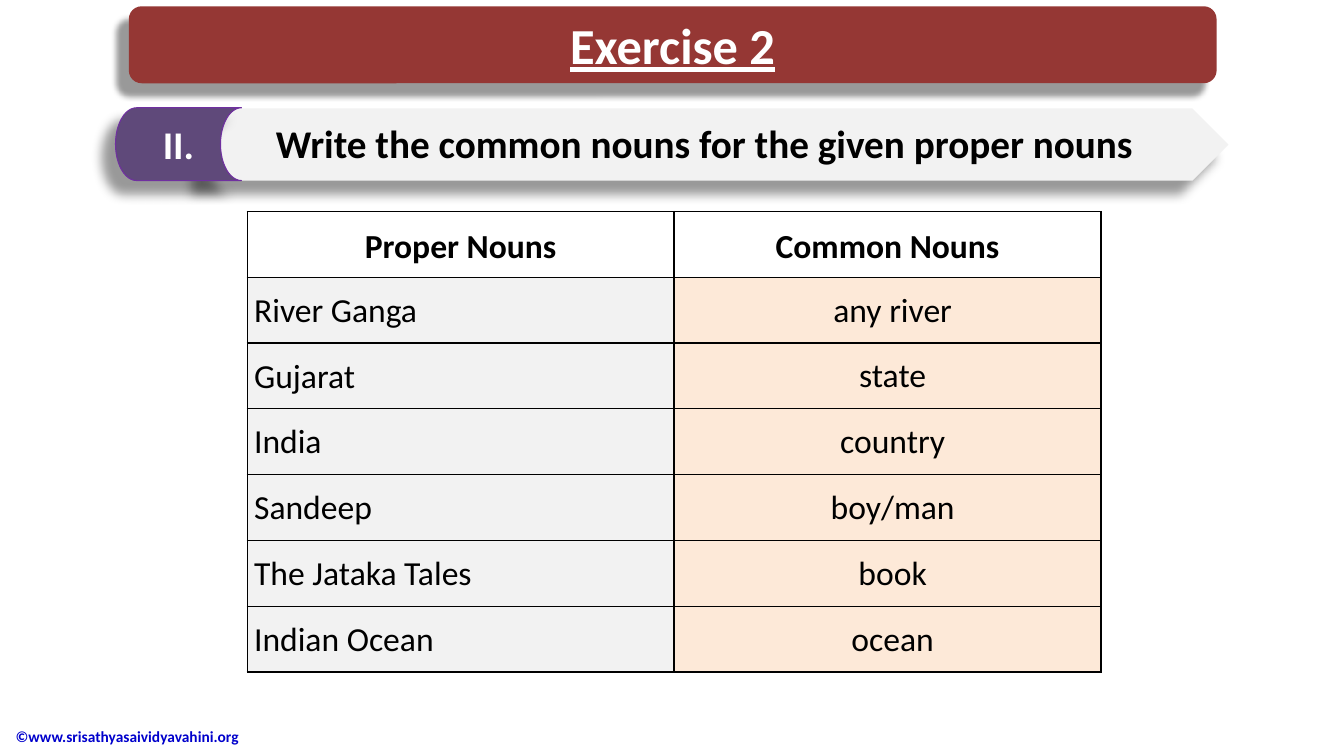
from lxml import etree
from pptx import Presentation
from pptx.dml.color import RGBColor
from pptx.enum.shapes import MSO_SHAPE
from pptx.enum.text import MSO_ANCHOR, PP_ALIGN
from pptx.oxml import parse_xml
from pptx.oxml.ns import qn
from pptx.util import Pt

FONT = "Calibri"
DRAWING = "http://schemas.openxmlformats.org/drawingml/2006/main"
NOUNS = [
    ("River Ganga", "any river"),
    ("Gujarat", "state"),
    ("India", "country"),
    ("Sandeep", "boy/man"),
    ("The Jataka Tales", "book"),
    ("Indian Ocean", "ocean"),
]


def color(hex_string):
    return RGBColor.from_string(hex_string)


def write(text_frame, text, size, ink="000000", bold=False,
          align=PP_ALIGN.LEFT, anchor=MSO_ANCHOR.TOP):
    text_frame.text = text
    text_frame.word_wrap = True
    text_frame.vertical_anchor = anchor
    paragraph = text_frame.paragraphs[0]
    paragraph.alignment = align
    font = paragraph.runs[0].font
    font.name, font.size, font.bold = FONT, Pt(size), bold
    font.color.rgb = color(ink)
    return font


def add_text(slide, box, text, size, **style):
    shape = slide.shapes.add_textbox(*map(Pt, box))
    write(shape.text_frame, text, size, **style)


def add_panel(slide, kind, box, fill, blur, line=None):
    """Filled shape with a soft shadow towards the lower left."""
    shape = slide.shapes.add_shape(kind, *map(Pt, box))
    shape.fill.solid()
    shape.fill.fore_color.rgb = color(fill)
    if line:
        shape.line.color.rgb = color(line)
        shape.line.width = Pt(0.75)
    else:
        shape.line.fill.background()
    shape.shadow.inherit = False
    effects = shape.element.spPr.find(qn("a:effectLst"))
    effects.append(parse_xml(
        f'<a:outerShdw xmlns:a="{DRAWING}" blurRad="{Pt(blur)}" dist="{Pt(13)}" '
        'dir="8100000" algn="tr" rotWithShape="0"><a:srgbClr val="000000">'
        '<a:alpha val="40000"/></a:srgbClr></a:outerShdw>'))
    return shape


def add_title_banner(slide, left, top, width, height):
    add_panel(slide, MSO_SHAPE.ROUNDED_RECTANGLE, (left, top, width, height),
              "953734", blur=4)
    title = slide.shapes.title
    title.left, title.top = Pt(left + 22.5), Pt(top + 2)
    title.width, title.height = Pt(width - 45), Pt(height - 4)
    font = write(title.text_frame, "Exercise 2", 36, ink="FFFFFF", bold=True,
                 align=PP_ALIGN.CENTER)
    font.underline = True
    # Bring the title in front of its banner
    title.element.getparent().append(title.element)


def add_instruction(slide, left, top, width, height):
    add_panel(slide, MSO_SHAPE.PENTAGON,
              (left + 63.5, top + 0.5, width - 63.5, height - 0.5), "F2F2F2", blur=8)
    number = add_panel(slide, MSO_SHAPE.FLOWCHART_STORED_DATA,
                       (left, top, 90, height), "5F497A", blur=8, line="7030A0")
    write(number.text_frame, "II.", 28, ink="FFFFFF", bold=True,
          align=PP_ALIGN.CENTER, anchor=MSO_ANCHOR.MIDDLE)
    add_text(slide, (left + 107.5, top + 5, 629, 41),
             "Write the common nouns for the given proper nouns", 28, bold=True)


def border_cell(cell):
    properties = cell._tc.get_or_add_tcPr()
    for position, side in enumerate(("lnL", "lnR", "lnT", "lnB")):
        line = etree.Element(qn(f"a:{side}"), w=str(Pt(1)))
        fill = etree.SubElement(line, qn("a:solidFill"))
        etree.SubElement(fill, qn("a:srgbClr"), val="000000")
        properties.insert(position, line)


def fill_cell(cell, text, fill=None, **style):
    cell.margin_left = cell.margin_right = Pt(5)
    cell.margin_top = cell.margin_bottom = Pt(5)
    if fill:
        cell.fill.solid()
        cell.fill.fore_color.rgb = color(fill)
    else:
        cell.fill.background()
    border_cell(cell)
    if text:
        write(cell.text_frame, text, 24, **style)
        cell.text_frame.paragraphs[0].line_spacing = 1.15


def add_noun_table(slide, left, top, width, row_height):
    row_count = len(NOUNS) + 1
    table = slide.shapes.add_table(
        row_count, 2, Pt(left), Pt(top), Pt(width), Pt(row_height * row_count)).table
    table.horz_banding = False
    for row in table.rows:
        row.height = Pt(row_height)

    # Header row
    for column, heading in enumerate(("Proper Nouns", "Common Nouns")):
        cell = table.cell(0, column)
        fill_cell(cell, heading, bold=True, align=PP_ALIGN.CENTER)
        cell.vertical_anchor = MSO_ANCHOR.MIDDLE

    # Proper nouns in cells, answers in boxes over the right column
    answer_width = 114
    answer_left = left + width * 0.756 - answer_width / 2
    for row, (proper, common) in enumerate(NOUNS, start=1):
        fill_cell(table.cell(row, 0), proper, fill="F2F2F2")
        fill_cell(table.cell(row, 1), "", fill="FDE9D8")
        add_text(slide, (answer_left, top + row * row_height + 4.5, answer_width, 36),
                 common, 24, align=PP_ALIGN.CENTER)


def add_footer(slide, left, top, width, height):
    add_text(slide, (left, top, width, height), "©www.srisathyasaividyavahini.org",
             11, ink="0000CC", bold=True, anchor=MSO_ANCHOR.MIDDLE)


def main():
    presentation = Presentation()
    presentation.slide_width, presentation.slide_height = Pt(960), Pt(540)
    slide = presentation.slides.add_slide(presentation.slide_layouts[5])
    add_footer(slide, 4, 511, 254, 30)
    add_noun_table(slide, 176.5, 151, 610, 47)
    add_instruction(slide, 82.5, 77, 795, 52)
    add_title_banner(slide, 92, 4.5, 777, 55)
    presentation.save("out.pptx")


if __name__ == "__main__":
    main()
